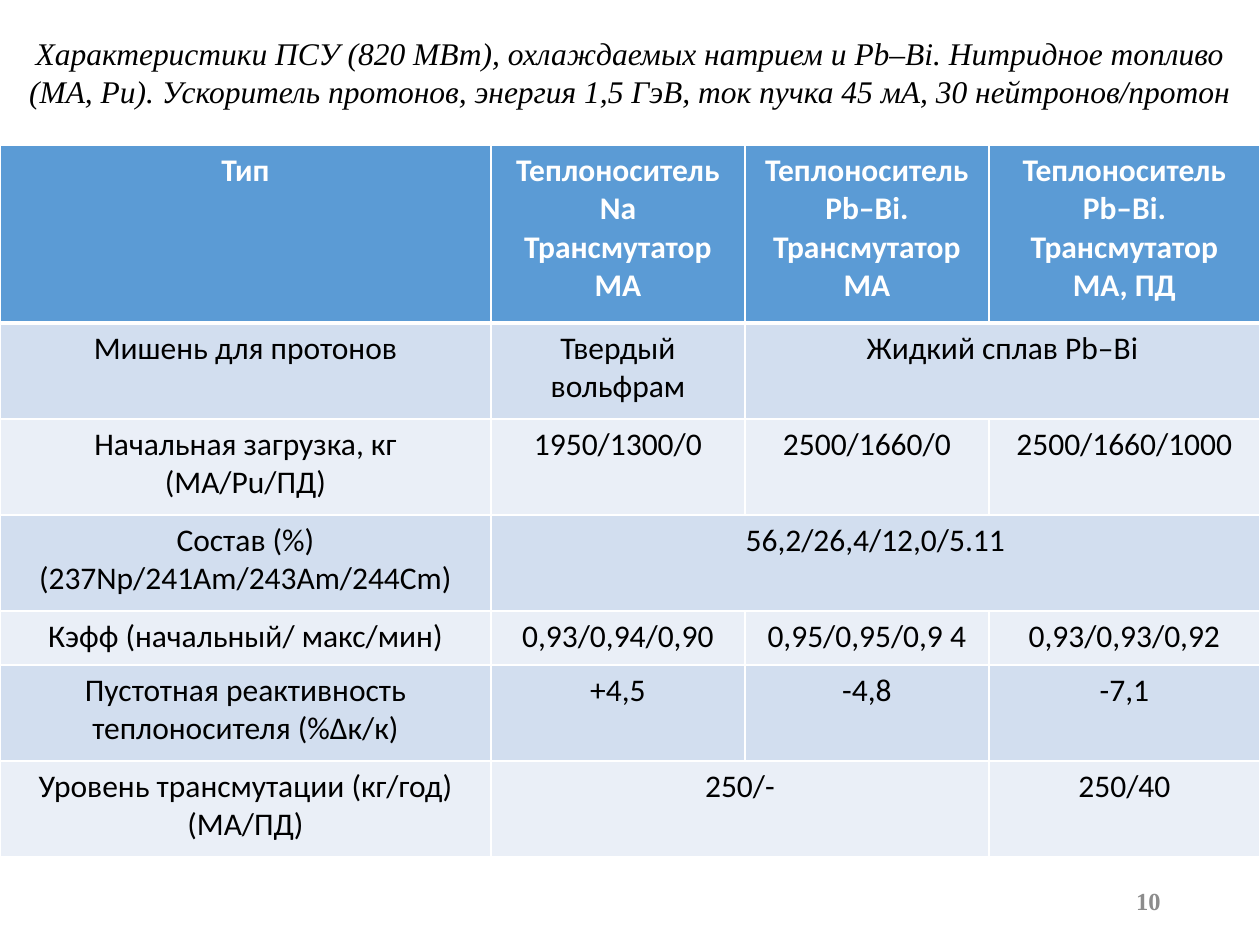
from lxml import etree
from pptx import Presentation, util as u
from pptx.dml.color import RGBColor
from pptx.enum import text as t
from pptx.oxml import ns

PX = 914400 / 126
WHITE = RGBColor(255, 255, 255)
BLACK = RGBColor(0, 0, 0)
GREY = RGBColor(0x8C, 0x8C, 0x8C)
BLUE = RGBColor(0x5B, 0x9B, 0xD5)
BANDS = RGBColor(0xEA, 0xEF, 0xF7), RGBColor(0xD2, 0xDE, 0xEF)

TITLE = ("Характеристики ПСУ (820 МВт), охлаждаемых натрием и Pb–Bi. "
         "Нитридное топливо (MA, Pu). Ускоритель протонов, энергия 1,5 ГэВ, "
         "ток пучка 45 мА, 30 нейтронов/протон")
COLS = [491, 254, 244, 271]
ROWS = [178, 96, 96, 96, 54, 96, 96]
DATA = [
    ["Тип", "Теплоноситель Na Трансмутатор МА",
     "Теплоноситель Pb–Bi. Трансмутатор МА",
     "Теплоноситель Pb–Bi. Трансмутатор МА, ПД"],
    ["Мишень для протонов", "Твердый вольфрам", "Жидкий сплав Pb–Bi", None],
    ["Начальная загрузка, кг (МА/Рu/ПД)", "1950/1300/0", "2500/1660/0",
     "2500/1660/1000"],
    ["Состав (%) (237Np/241Am/243Am/244Cm)", "56,2/26,4/12,0/5.11", None, None],
    ["Кэфф (начальный/ макс/мин)", "0,93/0,94/0,90", "0,95/0,95/0,9 4",
     "0,93/0,93/0,92"],
    ["Пустотная реактивность теплоносителя (%Δк/к)", "+4,5", "-4,8", "-7,1"],
    ["Уровень трансмутации (кг/год) (МА/ПД)", "250/-", None, "250/40"],
]
MERGES = [(1, 2, 3), (3, 1, 3), (6, 1, 2)]


def px(n):
    """Turn pixels into EMU."""
    return u.Emu(round(n * PX))


def style(frame, words, color, align=t.PP_ALIGN.CENTER, **form):
    """Write one paragraph and apply its font values."""
    frame.text = words
    para = frame.paragraphs[0]
    para.alignment = align
    para.font.color.rgb = color
    for key, val in form.items():
        setattr(para.font, key, val)


def place(shape, box):
    """Move a shape to a pixel box."""
    for key, val in zip(("left", "top", "width", "height"), box):
        setattr(shape, key, px(val))


def edge(cell, first, last):
    """Draw white borders, thick where the header meets the body."""
    props = cell._tc.get_or_add_tcPr()
    wide = {"lnT": 3 if first else 1, "lnB": 3 if last else 1}
    for i, side in enumerate(("lnL", "lnR", "lnT", "lnB")):
        line = etree.Element(ns.qn("a:" + side), w=str(u.Pt(wide.get(side, 1))))
        fill = etree.SubElement(line, ns.qn("a:solidFill"))
        etree.SubElement(fill, ns.qn("a:srgbClr"), val=str(WHITE))
        props.insert(i, line)


def title(slide, box):
    """Place the italic title."""
    shape = slide.shapes.title
    place(shape, box)
    frame = shape.text_frame
    for key, val in {"word_wrap": True, "auto_size": t.MSO_AUTO_SIZE.NONE,
                     "vertical_anchor": t.MSO_ANCHOR.TOP}.items():
        setattr(frame, key, val)
    style(frame, TITLE, BLACK, name="Times New Roman", size=u.Pt(18), italic=True)


def grid(slide, box):
    """Build the table of reactor data."""
    table = slide.shapes.add_table(len(ROWS), len(COLS), *map(px, box)).table
    for col, wide in zip(table.columns, COLS):
        col.width = px(wide)
    for row, high in zip(table.rows, ROWS):
        row.height = px(high)
    for r, line in enumerate(DATA):
        for c, words in enumerate(line):
            cell = table.cell(r, c)
            cell.fill.solid()
            cell.fill.fore_color.rgb = BANDS[r % 2] if r else BLUE
            edge(cell, r == 1, r == 0)
            if words:
                style(cell.text_frame, words, BLACK if r else WHITE,
                      name="Calibri", size=u.Pt(18), bold=r == 0)
    for r, start, end in MERGES:
        table.cell(r, start).merge(table.cell(r, end))


def number(slide, box):
    """Place the slide number."""
    frame = slide.shapes.add_textbox(*map(px, box)).text_frame
    frame.word_wrap = True
    frame.vertical_anchor = t.MSO_ANCHOR.MIDDLE
    style(frame, "10", GREY, t.PP_ALIGN.RIGHT,
          name="Times New Roman", size=u.Pt(14), bold=True)


def main():
    """Build and save the slide."""
    deck = Presentation()
    deck.slide_width, deck.slide_height = px(1260), px(945)
    slide = deck.slides.add_slide(deck.slide_layouts[5])
    number(slide, (890, 876, 283, 50))
    grid(slide, (0, 145, sum(COLS), sum(ROWS)))
    title(slide, (0, 28, 1260, 89))
    deck.save("out.pptx")


if __name__ == "__main__":
    main()
